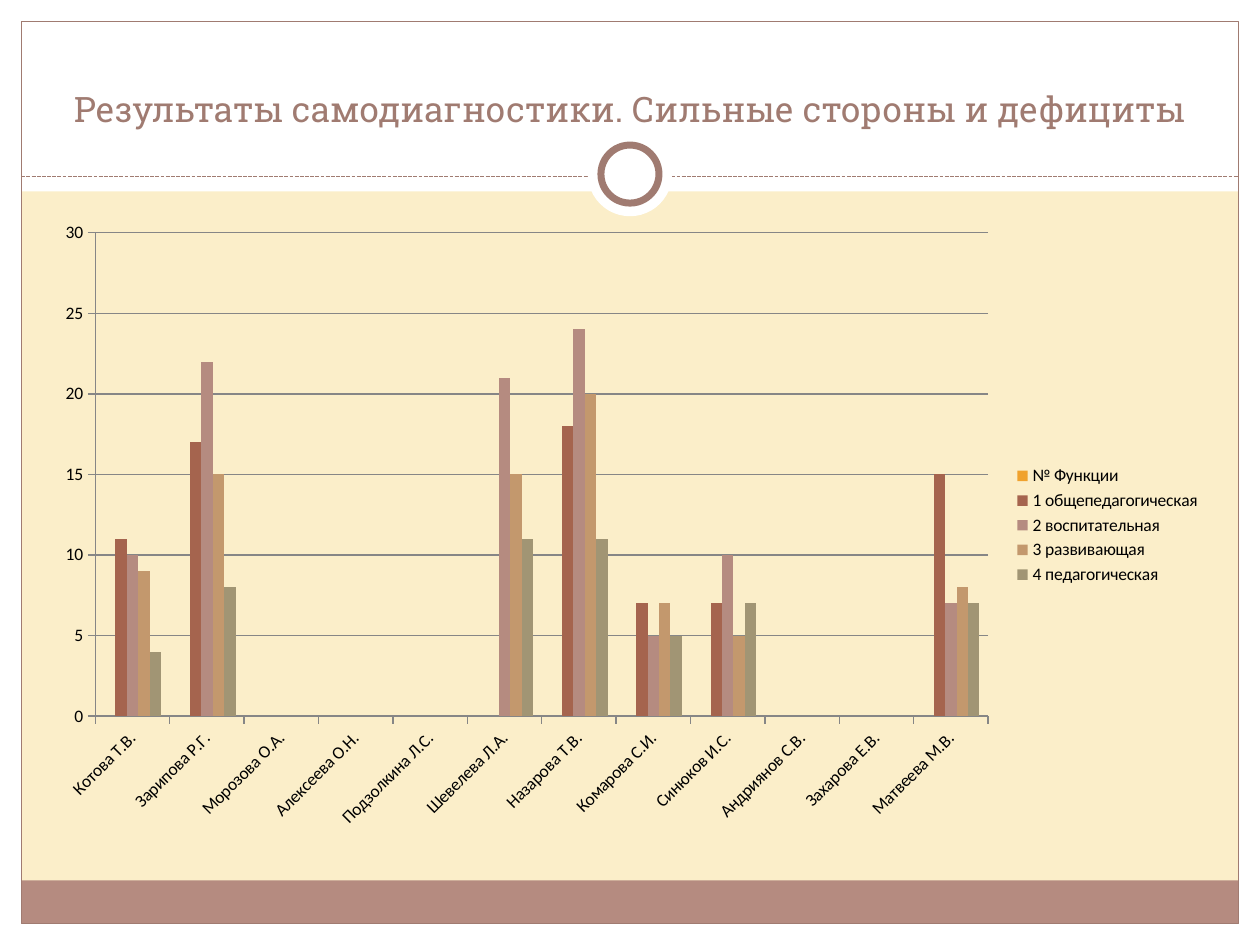
"""Build the slide with self-assessment results as a clustered column chart."""
from lxml.etree import SubElement
from pptx import Presentation
from pptx.chart.data import CategoryChartData as Data
from pptx.dml.color import RGBColor
from pptx.enum.chart import XL_CHART_TYPE as Kind, XL_LEGEND_POSITION as Side, XL_TICK_MARK as Tick
from pptx.enum.dml import MSO_LINE as Dash
from pptx.enum.shapes import MSO_CONNECTOR as Link, MSO_SHAPE as Form
from pptx.enum.text import MSO_ANCHOR as Anchor, PP_ALIGN as Align
from pptx.oxml.ns import qn
from pptx.util import Cm, Pt

CREAM = RGBColor(0xFB, 0xEE, 0xC9)
WHITE = RGBColor(0xFF, 0xFF, 0xFF)
ROSE = RGBColor(0xB5, 0x8B, 0x80)
BROWN = RGBColor(0xA0, 0x7B, 0x71)
BLACK = RGBColor(0, 0, 0)
GRAY = RGBColor(0x86, 0x86, 0x86)
GOLD = RGBColor(0xF0, 0xA2, 0x2E)
RUST = RGBColor(0xA5, 0x64, 0x4E)
TAN = RGBColor(0xC3, 0x98, 0x6D)
OLIVE = RGBColor(0xA1, 0x95, 0x74)

TITLE = "Результаты самодиагностики. Сильные стороны и дефициты"
NAMES = [
    "Котова Т.В.", "Зарипова Р.Г.", "Морозова О.А.", "Алексеева О.Н.",
    "Подзолкина Л.С.", "Шевелева Л.А.", "Назарова Т.В.", "Комарова С.И.",
    "Синюков И.С.", "Андриянов С.В.", "Захарова Е.В.", "Матвеева М.В.",
]
NA = None
SERIES = [
    ("№ Функции", GOLD, [NA] * len(NAMES)),
    ("1 общепедагогическая", RUST, [11, 17, NA, NA, NA, NA, 18, 7, 7, NA, NA, 15]),
    ("2 воспитательная", ROSE, [10, 22, NA, NA, NA, 21, 24, 5, 10, NA, NA, 7]),
    ("3 развивающая", TAN, [9, 15, NA, NA, NA, 15, 20, 7, 5, NA, NA, 8]),
    ("4 педагогическая", OLIVE, [4, 8, NA, NA, NA, 11, 11, 5, 7, NA, NA, 7]),
]

WIDE, HIGH, EDGE = 25.4, 19.05, 0.43
INNER = WIDE - 2 * EDGE
RULE, MID = 3.56, 3.51
DISC, RING = 1.7, 1.17
FRAMES = [
    (Form.RECTANGLE, (0, HIGH - EDGE, WIDE, EDGE), WHITE, 0),
    (Form.RECTANGLE, (0, 0, WIDE, 3.86), WHITE, 0),
    (Form.RECTANGLE, (0, 0, EDGE, HIGH), WHITE, 0),
    (Form.RECTANGLE, (WIDE - EDGE, 0, EDGE, HIGH), WHITE, 0),
    (Form.RECTANGLE, (EDGE, 17.75, INNER, 0.87), ROSE, 0),
    (Form.RECTANGLE, (EDGE, EDGE, INNER, HIGH - 2 * EDGE), None, 0.75),
]
DISCS = [
    (Form.OVAL, ((WIDE - size) / 2, MID - size / 2, size, size), WHITE, line)
    for size, line in ((DISC, 0), (RING, 4))
]


def cms(box):
    return [Cm(size) for size in box]


def paint(fill, color):
    fill.solid()
    fill.fore_color.rgb = color


def add_form(slide, form, box, color, line):
    shape = slide.shapes.add_shape(form, *cms(box))
    shape.shadow.inherit = False
    if color is None:
        shape.fill.background()
    else:
        paint(shape.fill, color)
    if line:
        shape.line.color.rgb = BROWN
        shape.line.width = Pt(line)
    else:
        shape.line.fill.background()


def add_rule(slide):
    ends = cms((EDGE, RULE, WIDE - EDGE, RULE))
    rule = slide.shapes.add_connector(Link.STRAIGHT, *ends)
    rule.line.color.rgb = BROWN
    rule.line.width = Pt(0.75)
    rule.line.dash_style = Dash.SQUARE_DOT
    SubElement(rule._element.spPr, qn("a:effectLst"))


def add_title(slide):
    frame = slide.shapes.add_textbox(*cms((0.85, 0.64, 23.7, 2.1))).text_frame
    frame.word_wrap = True
    frame.vertical_anchor = Anchor.BOTTOM
    para = frame.paragraphs[0]
    para.alignment = Align.CENTER
    run = para.add_run()
    run.text = TITLE
    run.font.name = "Roboto Slab"
    run.font.size = Pt(20)
    run.font.color.rgb = BROWN


def add_chart(slide):
    data = Data()
    data.categories = NAMES
    for name, _, vals in SERIES:
        data.add_series(name, vals)
    box = cms((0.85, 4.24, 23.62, 12.7))
    chart = slide.shapes.add_chart(Kind.COLUMN_CLUSTERED, *box, data).chart
    chart.font.name = "Calibri"
    chart.font.size = Pt(10)
    chart.font.color.rgb = BLACK
    chart.has_title = False
    chart.has_legend = True
    chart.legend.position = Side.RIGHT
    chart.legend.include_in_layout = False
    plot = chart.plots[0]
    plot.vary_by_categories = False
    plot.gap_width = 150
    plot.overlap = 0
    for bar, (_, color, _) in zip(plot.series, SERIES):
        paint(bar.format.fill, color)
    cat, val = chart.category_axis, chart.value_axis
    val.minimum_scale, val.maximum_scale, val.major_unit = 0, 30, 5
    val.has_major_gridlines = True
    for axis in (cat, val):
        axis.major_tick_mark = Tick.OUTSIDE
        axis.format.line.color.rgb = GRAY
        axis.tick_labels.font.size = Pt(10)
    val.major_gridlines.format.line.color.rgb = GRAY
    body = cat._element.find(qn("c:txPr")).find(qn("a:bodyPr"))
    body.set("rot", "-2700000")


def main():
    deck = Presentation()
    deck.slide_width, deck.slide_height = cms((WIDE, HIGH))
    slide = deck.slides.add_slide(deck.slide_layouts[6])
    paint(slide.background.fill, CREAM)
    for item in FRAMES:
        add_form(slide, *item)
    add_rule(slide)
    for item in DISCS:
        add_form(slide, *item)
    add_title(slide)
    add_chart(slide)
    deck.save("out.pptx")


if __name__ == "__main__":
    main()
